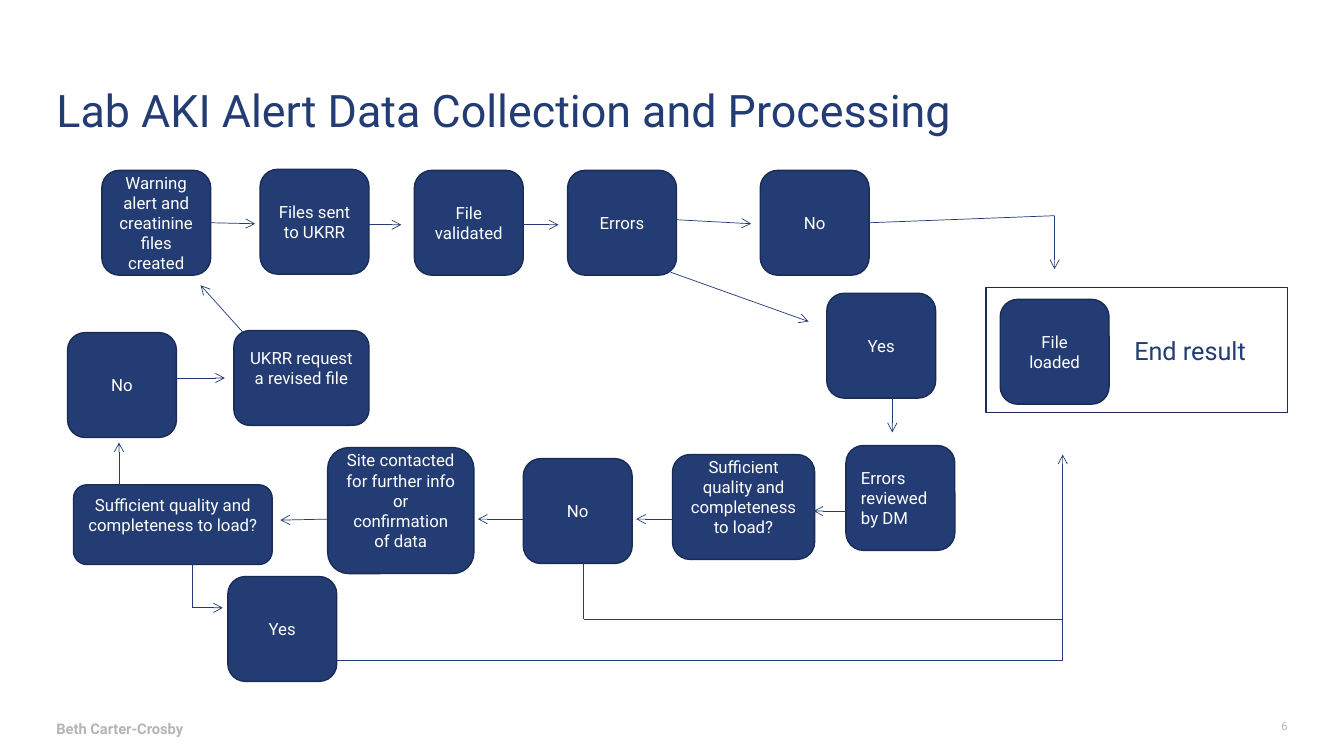
from dataclasses import dataclass
from itertools import pairwise

from lxml.etree import SubElement
from pptx import Presentation
from pptx.dml.color import RGBColor
from pptx.enum.shapes import MSO_CONNECTOR as Connector, MSO_SHAPE as Shape
from pptx.enum.text import MSO_ANCHOR as Anchor, PP_ALIGN as Align
from pptx.oxml.ns import qn
from pptx.util import Inches, Pt


@dataclass(frozen=True)
class Theme:
    font: str = "Roboto"
    navy: str = "233C73"
    border: str = "1A2C55"
    white: str = "FFFFFF"
    grey: str = "B7B4B3"
    title: float = 32
    result: float = 18
    body: float = 12
    footer: float = 10.5
    number: float = 8
    flow_line: float = 0.5
    box_line: float = 1


THEME = Theme()

# Layout in inches: the shared step size, margins and rows
SLIDE_WIDTH, SLIDE_HEIGHT = 13.33, 7.5
STEP_WIDTH, STEP_HEIGHT = 1.08, 1.04
MARGIN = 0.56
RIGHT_EDGE = 12.77
FOOTER_TOP = 7.14
TOP_ROW = 1.69
TOP_FLOW, REVIEW_FLOW = 2.23, 5.15
LOAD_X, LOAD_Y = 10.54, 6.14
LIFT = 0.2  # one line of space under raised text

# Steps: name, text, left, top
STEPS = [
    ("created", "Warning alert and creatinine files created", 1.01, TOP_ROW),
    ("sent", "Files sent to UKRR", 2.58, 1.68),
    ("validated", "File validated", 4.11, TOP_ROW),
    ("errors", "Errors", 5.63, TOP_ROW),
    ("no errors", "No", 7.54, TOP_ROW),
    ("has errors", "Yes", 8.2, 2.91),
    ("loaded", "File loaded", 9.92, 2.97),
    ("reviewed", "Errors reviewed by DM", 8.39, 4.42),
    ("not sufficient", "No", 5.19, 4.55),
    ("still not sufficient", "No", 0.67, 3.3),
    ("now sufficient", "Yes", 2.26, 5.72),
]

# Wider steps with raised text: text, left, top, width, height
QUESTION = "Sufficient quality and completeness to load?"
WIDE_STEPS = [
    (QUESTION, 6.67, 4.51, 1.41, STEP_HEIGHT),
    ("Site contacted for further info or confirmation of data", 3.25, 4.44, 1.45, 1.25),
    (QUESTION, 0.73, 4.81, 1.97, 0.79),
    ("UKRR request a revised file", 2.32, 3.28, 1.34, 0.94),
]

# Flows: points along the path, arrow at its end, step whose right side it leaves
FLOWS = [
    ([(2.09, 2.21), (2.53, 2.22)], True, "created"),
    ([(3.66, TOP_FLOW), (3.98, TOP_FLOW)], True, None),
    ([(5.19, TOP_FLOW), (5.54, TOP_FLOW)], True, None),
    ([(6.71, 2.18), (7.45, 2.22)], True, None),
    ([(6.65, 2.7), (8.02, 3.19)], True, None),
    ([(8.62, 2.21), (10.46, 2.14), (10.46, 2.67)], True, "no errors"),
    ([(8.85, 3.95), (8.85, 4.29)], True, None),
    ([(8.39, 5.07), (8.07, 5.07)], True, None),
    ([(6.67, REVIEW_FLOW), (6.31, REVIEW_FLOW)], True, None),
    ([(5.19, REVIEW_FLOW), (4.74, REVIEW_FLOW)], True, None),
    ([(3.25, REVIEW_FLOW), (2.78, 5.16)], True, None),
    ([(1.18, 4.81), (1.18, 4.39)], True, None),
    ([(1.75, 3.75), (2.23, 3.75)], True, None),
    ([(2.43, 3.32), (1.99, 2.83)], True, None),
    ([(1.91, 5.6), (1.91, 6.03), (2.21, 6.03)], True, None),
    ([(5.79, 5.59), (5.79, LOAD_Y), (LOAD_X, LOAD_Y), (LOAD_X, 4.51)], True, None),
    ([(3.34, 6.55), (LOAD_X, 6.55), (LOAD_X, LOAD_Y)], False, None),
]


def color(value):
    return RGBColor.from_string(value)


def write(shape, text, size, ink, align, bold=False):
    frame = shape.text_frame
    frame.text = text
    frame.word_wrap = True
    paragraph = frame.paragraphs[0]
    paragraph.alignment = align
    font = paragraph.runs[0].font
    font.name, font.size, font.bold = THEME.font, Pt(size), bold
    font.color.rgb = color(ink)


def add_label(slide, box, text, size, ink, align=Align.LEFT, bold=False, anchor=Anchor.TOP):
    shape = slide.shapes.add_textbox(*map(Inches, box))
    frame = shape.text_frame
    frame.margin_left = frame.margin_right = frame.margin_top = frame.margin_bottom = 0
    frame.vertical_anchor = anchor
    write(shape, text, size, ink, align, bold)


def add_box(slide, kind, box):
    shape = slide.shapes.add_shape(kind, *map(Inches, box))
    shape.shadow.inherit = False
    shape.line.color.rgb = color(THEME.border)
    shape.line.width = Pt(THEME.box_line)
    return shape


def add_step(slide, text, box, align=Align.CENTER, lift=0):
    shape = add_box(slide, Shape.ROUNDED_RECTANGLE, box)
    shape.fill.solid()
    shape.fill.fore_color.rgb = color(THEME.navy)
    frame = shape.text_frame
    frame.vertical_anchor = Anchor.MIDDLE
    frame.margin_top, frame.margin_bottom = 0, Inches(lift)
    write(shape, text, THEME.body, THEME.white, align)
    return shape


def add_flow(slide, points, arrow, source):
    for start, end in pairwise(points):
        line = slide.shapes.add_connector(Connector.STRAIGHT, *map(Inches, start + end))
        line.line.color.rgb = color(THEME.navy)
        line.line.width = Pt(THEME.flow_line)
        properties = line._element.spPr
        if arrow and end == points[-1]:
            SubElement(properties.find(qn("a:ln")), qn("a:tailEnd"), type="arrow")
        SubElement(properties, qn("a:effectLst"))
        if source is not None and start == points[0]:
            line.begin_connect(source, 3)


def main():
    presentation = Presentation()
    presentation.slide_width = Inches(SLIDE_WIDTH)
    presentation.slide_height = Inches(SLIDE_HEIGHT)
    slide = presentation.slides.add_slide(presentation.slide_layouts[6])

    # Title and footer
    add_label(slide, (MARGIN, 0.4, 10.43, 1.38), "Lab AKI Alert Data Collection and Processing",
              THEME.title, THEME.navy, anchor=Anchor.MIDDLE)
    add_label(slide, (MARGIN, FOOTER_TOP, 9.84, 0.18), "Beth Carter-Crosby",
              THEME.footer, THEME.grey, bold=True)
    add_label(slide, (RIGHT_EDGE - 0.39, FOOTER_TOP, 0.39, 0.13), "6",
              THEME.number, THEME.grey, Align.RIGHT)

    # End result frame
    frame = add_box(slide, Shape.RECTANGLE, (RIGHT_EDGE - 2.99, 2.85, 2.99, 1.24))
    frame.fill.background()
    add_label(slide, (11.25, 3.33, 1.36, 0.3), "End result", THEME.result, THEME.navy)

    # Steps
    steps = {}
    for name, text, left, top in STEPS:
        align = Align.LEFT if name == "reviewed" else Align.CENTER
        steps[name] = add_step(slide, text, (left, top, STEP_WIDTH, STEP_HEIGHT), align)
    for text, *box in WIDE_STEPS:
        add_step(slide, text, box, lift=LIFT)

    # Flows between steps
    for points, arrow, source in FLOWS:
        add_flow(slide, points, arrow, steps.get(source))

    presentation.save("out.pptx")


if __name__ == "__main__":
    main()
